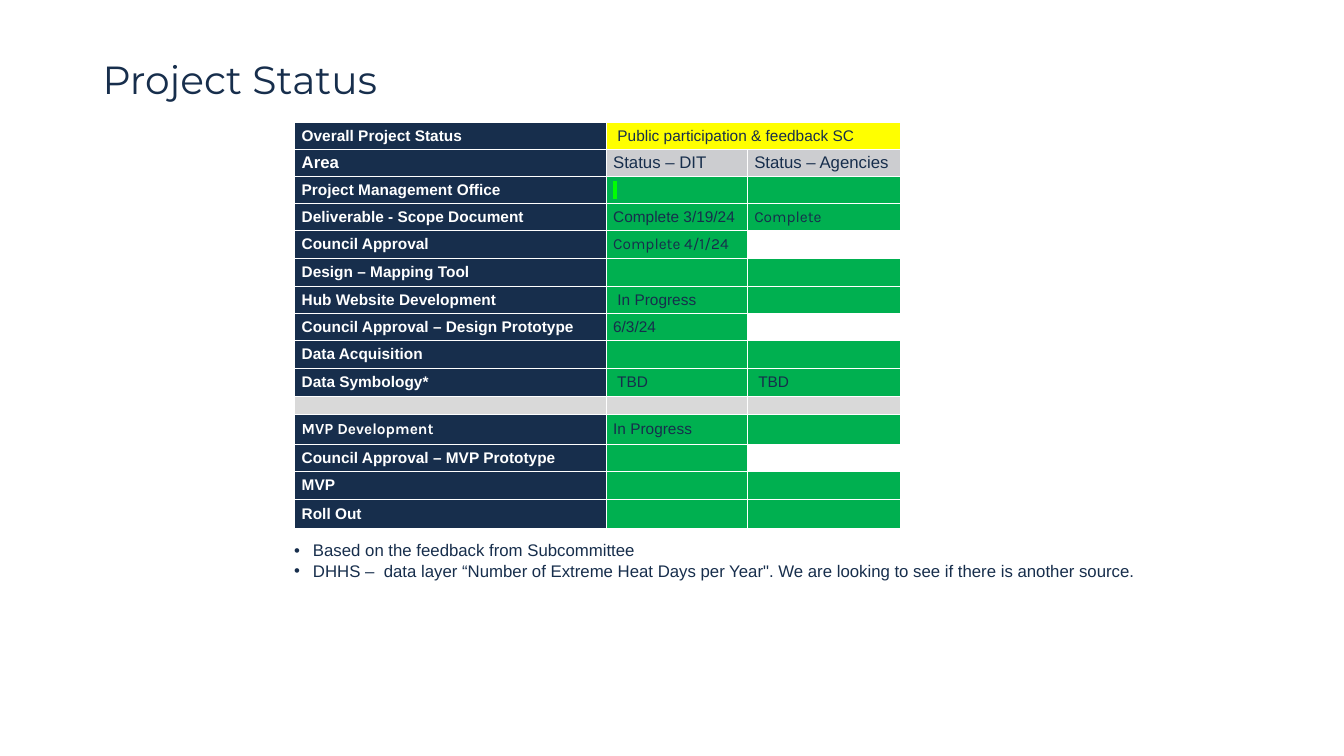
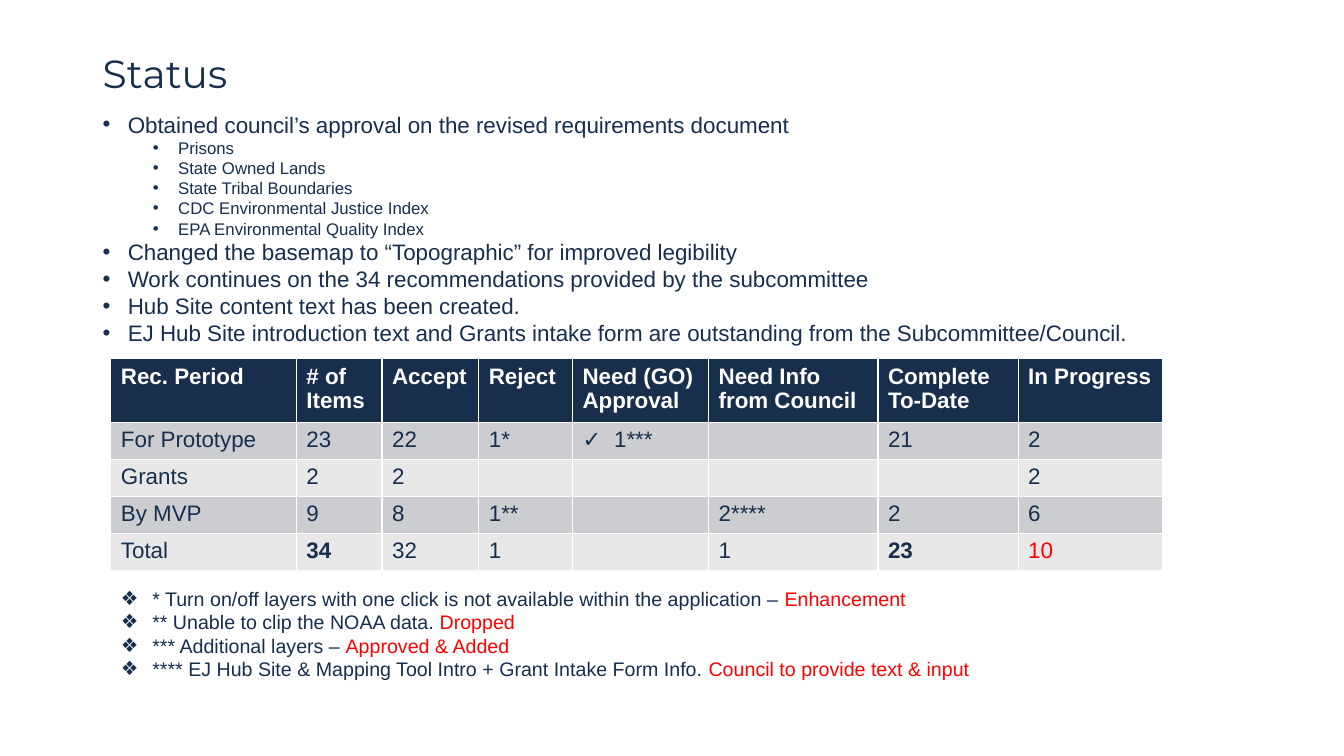
"""Build two project status slides with tables and bulleted notes."""
from lxml import etree
from pptx import Presentation
from pptx.dml.color import RGBColor
from pptx.enum.text import MSO_ANCHOR, MSO_AUTO_SIZE, PP_ALIGN
from pptx.oxml.ns import qn
from pptx.util import Pt

TOP, MID = MSO_ANCHOR.TOP, MSO_ANCHOR.MIDDLE
FIXED, LEFT = MSO_AUTO_SIZE.NONE, PP_ALIGN.LEFT
HUES = {
    "navy": "172E4C", "white": "FFFFFF", "green": "00B050", "lime": "00FF00",
    "yellow": "FFFF00", "red": "FF0000", "gray": "CCCDD0", "pale": "E8E8E9",
    "gap": "D9D9D9",
}
HUE = {name: RGBColor.from_string(code) for name, code in HUES.items()}


def pen(para, text, size, hue="navy", bold=False, face="Arial"):
    """Write text in a paragraph and set its font."""
    font = para.font
    font.size, font.bold, font.name = Pt(size), bold, face
    font.color.rgb = HUE[hue]
    if text:
        para.add_run().text = text


def mark(para, char, left, hang):
    """Give a paragraph a bullet with a hanging indent."""
    props = para._p.get_or_add_pPr()
    props.set("marL", str(Pt(left)))
    props.set("indent", str(-Pt(hang)))
    etree.SubElement(props, qn("a:buFont")).set("typeface", "Arial")
    etree.SubElement(props, qn("a:buChar")).set("char", char)


deck = Presentation()
deck.slide_width, deck.slide_height = Pt(960), Pt(540)
pages = []
for text, top in (("Project Status", 39.6), ("Status", 35.3)):
    page = deck.slides.add_slide(deck.slide_layouts[5])
    title = page.shapes.title
    title.left, title.top, title.width, title.height = Pt(66.2), Pt(top), Pt(828), Pt(44)
    frame = title.text_frame
    frame.auto_size, frame.vertical_anchor = FIXED, TOP
    para = frame.paragraphs[0]
    para.alignment, para.line_spacing = LEFT, 0.9
    pen(para, text, 28, face="Montserrat")
    pages.append(page)
first, second = pages

areas = [
    ("Overall Project Status", " Public participation & feedback SC", "", 19.3),
    ("Area", "Status – DIT", "Status – Agencies", 19.3),
    ("Project Management Office", " ", "", 19.3),
    ("Deliverable - Scope Document", "Complete 3/19/24", "Complete", 19.3),
    ("Council Approval", "Complete 4/1/24", None, 20),
    ("Design – Mapping Tool", "", "", 20),
    ("Hub Website Development", " In Progress", "", 19.6),
    ("Council Approval – Design Prototype", "6/3/24", None, 19.3),
    ("Data Acquisition", "", "", 19.6),
    ("Data Symbology*", " TBD", " TBD", 20.4),
    ("", "", "", 12.9),
    ("MVP Development", "In Progress", "", 21),
    ("Council Approval – MVP Prototype", "", None, 19.3),
    ("MVP", "", "", 20),
    ("Roll Out", "", "", 21.4),
]
fills = {0: "yellow", 1: "gray", 10: "gap"}
karla = {"Complete", "Complete 4/1/24", "MVP Development"}
grid = first.shapes.add_table(len(areas), 3, Pt(210.5), Pt(87.5), Pt(432.7), Pt(290)).table
grid.first_col = True
for col, width in zip(grid.columns, (222.5, 100.8, 109.4)):
    col.width = Pt(width)
for row, (*texts, height) in enumerate(areas):
    grid.rows[row].height = Pt(height)
    for col, text in enumerate(texts):
        cell = grid.cell(row, col)
        cell.margin_left = cell.margin_right = Pt(5)
        cell.margin_top = cell.margin_bottom = 0
        cell.vertical_anchor = MID
        fill = fills.get(row, "green")
        if col == 0 and row != 10:
            fill = "navy"
        elif text is None:
            fill = "white"
        cell.fill.solid()
        cell.fill.fore_color.rgb = HUE[fill]
        pen(cell.text_frame.paragraphs[0], text, 12 if row == 1 else 11,
            "white" if col == 0 else "navy", col == 0,
            "Karla" if text in karla else "Arial")
grid.cell(0, 1).merge(grid.cell(0, 2))
blank = grid.cell(2, 1).text_frame.paragraphs[0].runs[0]
glow = etree.SubElement(blank._r.get_or_add_rPr(), qn("a:highlight"))
etree.SubElement(glow, qn("a:srgbClr")).set("val", HUES["lime"])

frame = first.shapes.add_textbox(Pt(203), Pt(382.3), Pt(624), Pt(36)).text_frame
frame.word_wrap = False
notes = (
    "Based on the feedback from Subcommittee",
    "DHHS –  data layer “Number of Extreme Heat Days per Year\". "
    "We are looking to see if there is another source.",
)
for num, text in enumerate(notes):
    para = frame.add_paragraph() if num else frame.paragraphs[0]
    mark(para, "•", 13.5, 13.5)
    pen(para, text, 12)

points = [
    (0, "Obtained council’s approval on the revised requirements document"),
    (1, "Prisons"),
    (1, "State Owned Lands"),
    (1, "State Tribal Boundaries"),
    (1, "CDC Environmental Justice Index"),
    (1, "EPA Environmental Quality Index"),
    (0, "Changed the basemap to “Topographic” for improved legibility"),
    (0, "Work continues on the 34 recommendations provided by the subcommittee"),
    (0, "Hub Site content text has been created."),
    (0, "EJ Hub Site introduction text and Grants intake form are outstanding "
        "from the Subcommittee/Council."),
]
frame = second.shapes.add_textbox(Pt(66.2), Pt(75.6), Pt(821), Pt(180)).text_frame
frame.word_wrap = True
for num, (level, text) in enumerate(points):
    para = frame.add_paragraph() if num else frame.paragraphs[0]
    para.level = level
    mark(para, "•", 18 + 36 * level, 18)
    pen(para, text, 12 if level else 16)

counts = [
    ("Rec. Period", "# of Items", "Accept", "Reject", "Need (GO) Approval",
     "Need Info from Council", "Complete To-Date", "In Progress"),
    ("For Prototype", "23", "22", "1*", "1***", "", "21", "2"),
    ("Grants", "2", "2", "", "", "", "", "2"),
    ("By MVP", "9", "8", "1**", "", "2****", "2", "6"),
    ("Total", "34", "32", "1", "", "1", "23", "10"),
]
grid = second.shapes.add_table(5, 8, Pt(79.2), Pt(256.3), Pt(751), Pt(142)).table
for col, width in zip(grid.columns, (132.5, 61.2, 69.1, 67, 97.2, 121, 100.1, 103)):
    col.width = Pt(width)
for row, texts in enumerate(counts):
    grid.rows[row].height = Pt(25 if row else 42)
    for col, text in enumerate(texts):
        cell = grid.cell(row, col)
        cell.fill.solid()
        cell.fill.fore_color.rgb = HUE[("pale", "gray")[row % 2] if row else "navy"]
        para = cell.text_frame.paragraphs[0]
        if text == "1***":
            mark(para, "✓", 22.5, 22.5)
        hue = "red" if text == "10" else "navy" if row else "white"
        pen(para, text, 16, hue, row == 0 or (row == 4 and col in (1, 6)))

remarks = [
    ("* Turn on/off layers with one click is not available within the application – ",
     "Enhancement"),
    ("** Unable to clip the NOAA data. ", "Dropped"),
    ("*** Additional layers – ", "Approved & Added"),
    ("**** EJ Hub Site & Mapping Tool Intro + Grant Intake Form Info. ",
     "Council to provide text & input"),
]
frame = second.shapes.add_textbox(Pt(79.2), Pt(415.4), Pt(628.6), Pt(75)).text_frame
frame.word_wrap = True
for num, (text, result) in enumerate(remarks):
    para = frame.add_paragraph() if num else frame.paragraphs[0]
    mark(para, "❖", 22.5, 22.5)
    pen(para, text, 14)
    run = para.add_run()
    run.text = result
    run.font.color.rgb = HUE["red"]

deck.save("out.pptx")
